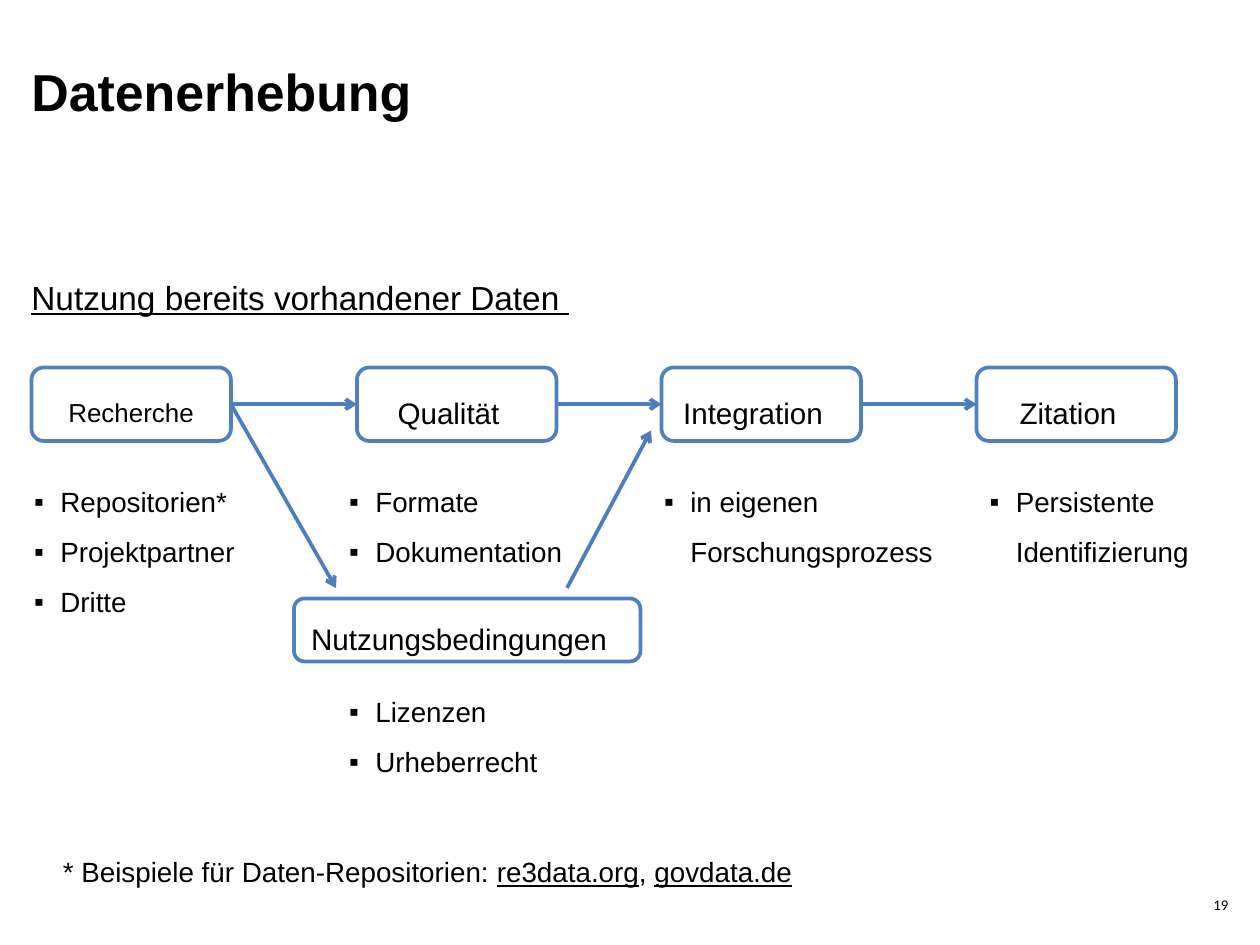
from dataclasses import dataclass

from lxml.etree import SubElement
from pptx import Presentation
from pptx.dml.color import RGBColor
from pptx.enum.shapes import MSO_CONNECTOR, MSO_SHAPE
from pptx.enum.text import MSO_ANCHOR, PP_ALIGN
from pptx.oxml.ns import qn
from pptx.shapes.base import BaseShape
from pptx.slide import Slide
from pptx.text.text import TextFrame, _Paragraph as Paragraph
from pptx.util import Cm, Pt

COLORS = {"text": "000000", "box": "FFFFFF", "border": "4F81BD", "arrow": "4B7EBC"}
STEP_TOP, STEP_WIDTH, STEP_HEIGHT = 7.0, 3.8, 1.4
STEP_MIDDLE = STEP_TOP + STEP_HEIGHT / 2
LIST_TOP = 8.8
BULLET_INDENT = Cm(0.5)


@dataclass
class Step:
    label: str
    left: float
    top: float = STEP_TOP
    width: float = STEP_WIDTH
    height: float = STEP_HEIGHT
    size: int = 16
    left_inset: float = 0.1
    right_inset: float = 0.41


@dataclass
class BulletList:
    items: list[str]
    left: float
    top: float = LIST_TOP
    width: float = 5.0


@dataclass
class Arrow:
    start: tuple[float, float]
    end: tuple[float, float]


STEPS = [
    Step("Recherche", 0.6, size=14, left_inset=0.25, right_inset=0.25),
    Step("Qualität", 6.8),
    Step("Integration", 12.6),
    Step("Zitation", 18.6),
]
TERMS = Step("Nutzungsbedingungen", 5.6, top=11.4, width=6.6, height=1.2)

LISTS = [
    BulletList(["Repositorien*", "Projektpartner", "Dritte"], 0.4),
    BulletList(["Formate", "Dokumentation"], 6.4),
    BulletList(["Lizenzen", "Urheberrecht"], 6.4, top=12.8),
    BulletList(["in eigenen Forschungsprozess"], 12.4, width=5.8),
    BulletList(["Persistente Identifizierung"], 18.6, width=5.8),
]

ARROWS = [
    Arrow((before.left + STEP_WIDTH, STEP_MIDDLE), (after.left, STEP_MIDDLE))
    for before, after in zip(STEPS, STEPS[1:])
] + [
    Arrow((STEPS[0].left + STEP_WIDTH, STEP_MIDDLE), (6.4, 11.2)),
    Arrow((10.8, 11.2), (12.4, 8.2)),
]


def color(name: str) -> RGBColor:
    return RGBColor.from_string(COLORS[name])


def style(paragraph: Paragraph, size: int, name: str = "Arial") -> None:
    paragraph.font.name = name
    paragraph.font.size = Pt(size)
    paragraph.font.color.rgb = color("text")


def add_text_frame(slide: Slide, left: float, top: float, width: float,
                   height: float, margin: float = 0) -> TextFrame:
    shape = slide.shapes.add_textbox(Cm(left), Cm(top), Cm(width), Cm(height))
    frame = shape.text_frame
    frame.word_wrap = True
    frame.margin_left = frame.margin_right = Cm(margin)
    frame.margin_top = frame.margin_bottom = Cm(margin / 2)
    return frame


def add_step(slide: Slide, step: Step) -> BaseShape:
    shape = slide.shapes.add_shape(
        MSO_SHAPE.ROUNDED_RECTANGLE,
        Cm(step.left), Cm(step.top), Cm(step.width), Cm(step.height))
    shape.shadow.inherit = False
    shape.fill.solid()
    shape.fill.fore_color.rgb = color("box")
    shape.line.color.rgb = color("border")
    shape.line.width = Pt(2)
    frame = shape.text_frame
    frame.vertical_anchor = MSO_ANCHOR.MIDDLE
    frame.margin_left, frame.margin_right = Cm(step.left_inset), Cm(step.right_inset)
    paragraph = frame.paragraphs[0]
    paragraph.text = step.label
    paragraph.alignment = PP_ALIGN.CENTER
    paragraph.line_spacing = 1.5
    style(paragraph, step.size)
    return shape


def add_bullet_list(slide: Slide, bullets: BulletList) -> None:
    height = 0.25 + 0.95 * max(2, len(bullets.items))
    frame = add_text_frame(slide, bullets.left, bullets.top, bullets.width, height, 0.25)
    for index, item in enumerate(bullets.items):
        paragraph = frame.add_paragraph() if index else frame.paragraphs[0]
        paragraph.text = item
        paragraph.line_spacing = 1.5
        properties = paragraph._p.get_or_add_pPr()
        properties.set("marL", str(BULLET_INDENT))
        properties.set("indent", str(-BULLET_INDENT))
        SubElement(properties, qn("a:buFont"), typeface="Arial")
        SubElement(properties, qn("a:buChar"), char="▪")
        style(paragraph, 15)


def add_arrow(slide: Slide, arrow: Arrow) -> None:
    connector = slide.shapes.add_connector(
        MSO_CONNECTOR.STRAIGHT, *map(Cm, arrow.start), *map(Cm, arrow.end))
    connector.line.color.rgb = color("arrow")
    connector.line.width = Pt(2)
    SubElement(connector.line._get_or_add_ln(), qn("a:tailEnd"), type="arrow")
    SubElement(connector._element.spPr, qn("a:effectLst"))


def main() -> None:
    presentation = Presentation()
    presentation.slide_width, presentation.slide_height = Cm(24), Cm(18)
    slide = presentation.slides.add_slide(presentation.slide_layouts[6])

    # Title and subtitle
    title = add_text_frame(slide, 0.6, 1.3, 17.2, 3).paragraphs[0]
    title.text = "Datenerhebung"
    title.line_spacing = Pt(29)
    style(title, 28)
    title.font.bold = True

    subtitle = add_text_frame(slide, 0.6, 4.9, 22.8, 1.2).paragraphs[0]
    subtitle.text = "Nutzung bereits vorhandener Daten "
    subtitle.line_spacing = 1.5
    style(subtitle, 18)
    subtitle.font.underline = True

    # Process steps with their bullet lists
    for step in [*STEPS, TERMS]:
        add_step(slide, step)
    for bullets in LISTS:
        add_bullet_list(slide, bullets)
    for arrow in ARROWS:
        add_arrow(slide, arrow)

    # Footnote
    footnote = add_text_frame(slide, 1.2, 15.97, 20, 0.95).paragraphs[0]
    footnote.line_spacing = 1.5
    style(footnote, 15)
    for text, underlined in [("* Beispiele für Daten-Repositorien: ", False),
                             ("re3data.org", True), (", ", False), ("govdata.de", True)]:
        run = footnote.add_run()
        run.text = text
        run.font.underline = underlined

    # Page number
    number_frame = add_text_frame(slide, 17.2, 17, 6.2, 0.4)
    number_frame.vertical_anchor = MSO_ANCHOR.BOTTOM
    number = number_frame.paragraphs[0]
    number.text = "19"
    number.alignment = PP_ALIGN.RIGHT
    style(number, 8, "Calibri")

    presentation.save("out.pptx")


if __name__ == "__main__":
    main()
